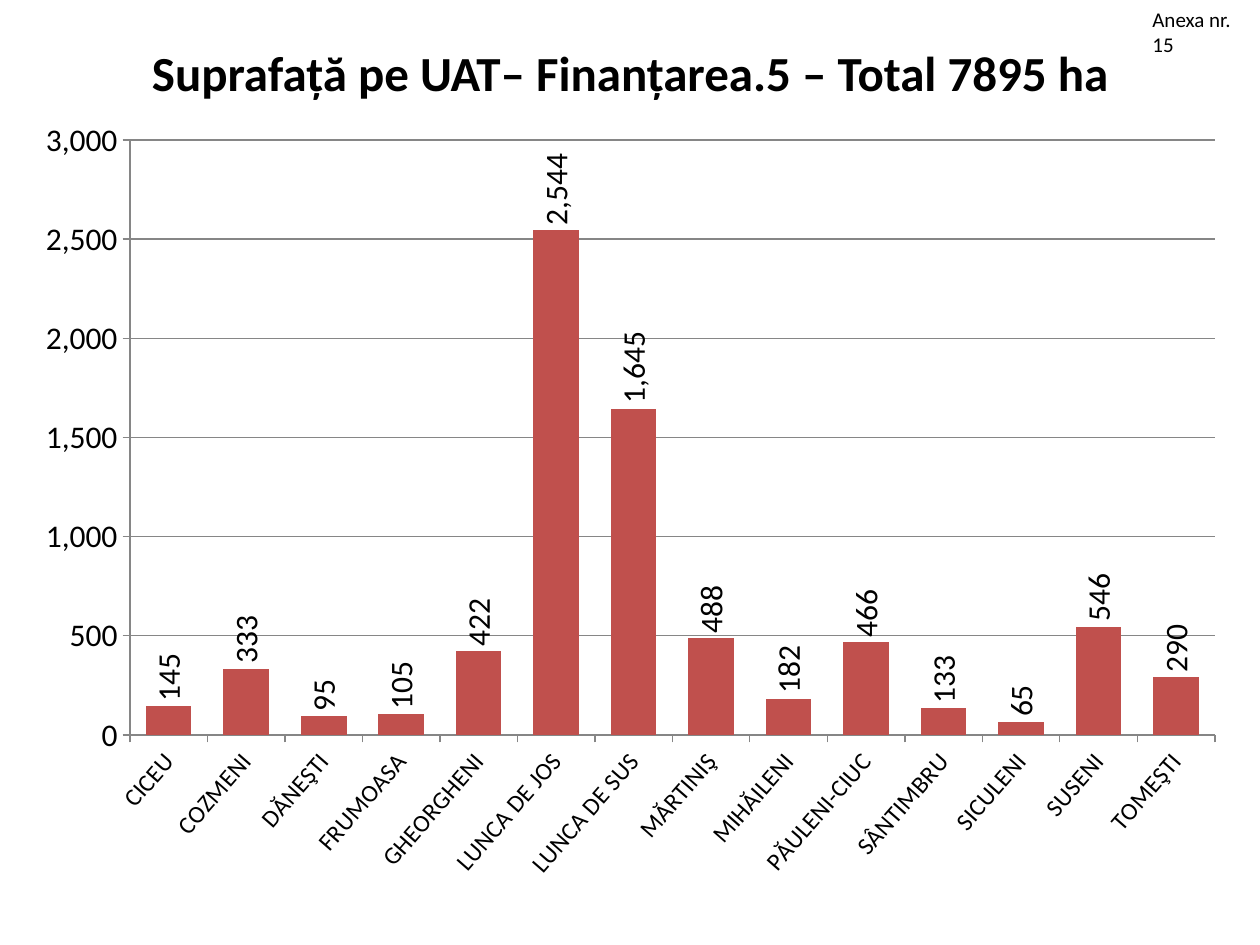
from pptx import Presentation
from pptx.chart.data import CategoryChartData as ChartData
from pptx.dml.color import RGBColor
from pptx.enum.chart import XL_CHART_TYPE as Chart, XL_LABEL_POSITION as LabelPos, XL_TICK_MARK as Tick
from pptx.enum.text import MSO_ANCHOR as Anchor, PP_ALIGN as Align
from pptx.oxml import parse_xml
from pptx.oxml.ns import nsdecls, qn
from pptx.util import Pt

SCALE = 914400 / 126
AREAS = {
    "CICEU": 145, "COZMENI": 333, "DĂNEŞTI": 95, "FRUMOASA": 105,
    "GHEORGHENI": 422, "LUNCA DE JOS": 2544, "LUNCA DE SUS": 1645,
    "MĂRTINIŞ": 488, "MIHĂILENI": 182, "PĂULENI-CIUC": 466,
    "SÂNTIMBRU": 133, "SICULENI": 65, "SUSENI": 546, "TOMEŞTI": 290,
}


def px(*lengths):
    return [round(n * SCALE) for n in lengths]


def rgb(color):
    return RGBColor.from_string(color)


def rotate(element, degrees):
    for body in element.iter(qn("a:bodyPr")):
        body.set("rot", str(degrees * 60000))
        body.set("vert", "horz")


class Deck:
    """Builds slides in one shared style."""

    font, ink, bar, grid = "Calibri", "000000", "C0504D", "868686"

    def __init__(self, width, height):
        self.prs = Presentation()
        self.prs.slide_width, self.prs.slide_height = px(width, height)
        self.s = None

    def add_slide(self):
        self.s = self.prs.slides.add_slide(self.prs.slide_layouts[5])

    def style(self, font, size, bold=False):
        font.name, font.size, font.bold = self.font, Pt(size), bold
        font.color.rgb = rgb(self.ink)

    def title(self, text, box, size):
        sp = self.s.shapes.title
        sp.left, sp.top, sp.width, sp.height = px(*box)
        tf = sp.text_frame
        tf.text = text
        tf.vertical_anchor = Anchor.MIDDLE
        p = tf.paragraphs[0]
        p.alignment = Align.CENTER
        self.style(p.runs[0].font, size, True)

    def text(self, text, box, size):
        tf = self.s.shapes.add_textbox(*px(*box)).text_frame
        tf.word_wrap = True
        tf.text = text
        self.style(tf.paragraphs[0].runs[0].font, size)

    def columns(self, values, box, plot_box, size, cat_size):
        data = ChartData(number_format="#,##0")
        data.categories = list(values)
        data.add_series("Series 1", list(values.values()))
        chart = self.s.shapes.add_chart(Chart.COLUMN_CLUSTERED, *px(*box), data).chart
        chart.has_legend = chart.has_title = False
        self.style(chart.font, size)
        plot = chart.plots[0]
        plot.gap_width, plot.vary_by_categories = 70, False
        fill = plot.series[0].format.fill
        fill.solid()
        fill.fore_color.rgb = rgb(self.bar)
        self.labels(plot, size)
        self.axes(chart, size, cat_size)
        self.place_plot(chart, box, plot_box)

    def labels(self, plot, size):
        plot.has_data_labels = True
        labels = plot.data_labels
        labels.show_value = True
        labels.number_format, labels.number_format_is_linked = "#,##0", False
        labels.position = LabelPos.OUTSIDE_END
        self.style(labels.font, size)
        rotate(labels._element, -90)

    def axes(self, chart, size, cat_size):
        cat, val = chart.category_axis, chart.value_axis
        val.minimum_scale, val.maximum_scale, val.major_unit = 0, 3000, 500
        val.has_major_gridlines = True
        val.tick_labels.number_format = "#,##0"
        val.tick_labels.number_format_is_linked = False
        for axis, points in ((cat, cat_size), (val, size)):
            axis.major_tick_mark = Tick.OUTSIDE
            self.style(axis.tick_labels.font, points)
        for part in (cat, val, val.major_gridlines):
            part.format.line.color.rgb = rgb(self.grid)
            part.format.line.width = Pt(0.75)
        rotate(cat._element, -49)

    def place_plot(self, chart, box, plot_box):
        left, top, width, height = box
        x, y, w, h = plot_box
        shares = {"x": (x - left) / width, "y": (y - top) / height, "w": w / width, "h": h / height}
        modes = "".join(f'<c:{k}Mode val="edge"/>' for k in "xy")
        sizes = "".join(f'<c:{k} val="{v:.4f}"/>' for k, v in shares.items())
        area = chart._chartSpace.chart.plotArea
        for old in area.findall(qn("c:layout")):
            area.remove(old)
        area.insert(0, parse_xml(
            f'<c:layout {nsdecls("c")}><c:manualLayout><c:layoutTarget val="inner"/>'
            f"{modes}{sizes}</c:manualLayout></c:layout>"))


def main():
    deck = Deck(1260, 945)
    deck.add_slide()
    deck.title("Suprafață pe UAT– Finanțarea.5 – Total 7895 ha", (63, 38, 1134, 67), 28)
    deck.columns(AREAS, (21, 105, 1218, 787), (130, 140, 1085, 595), 18, 14)
    deck.text("Anexa nr. 15", (1140, 0, 120, 38), 12)
    deck.prs.save("out.pptx")


if __name__ == "__main__":
    main()
